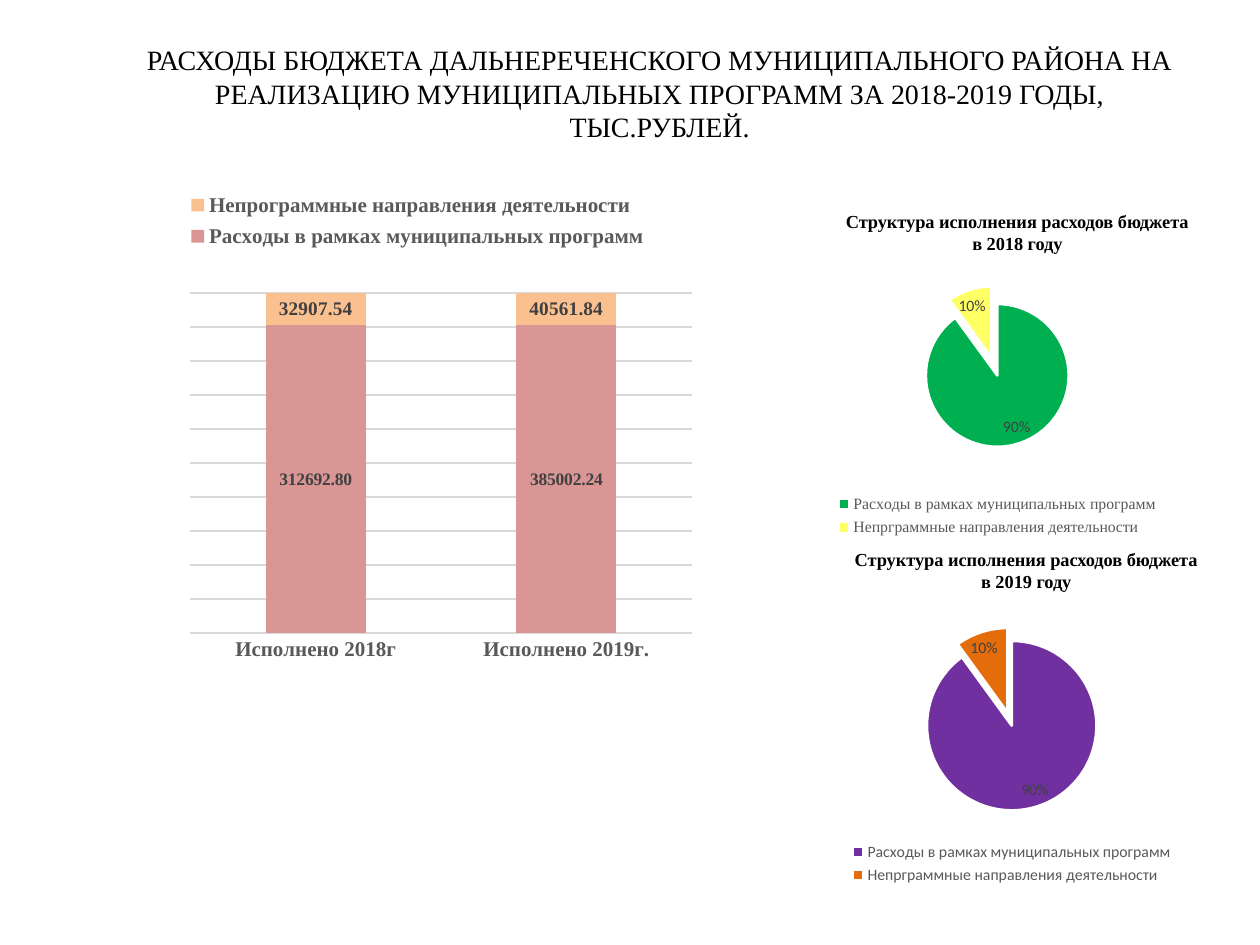
from lxml import etree
from pptx import Presentation
from pptx.chart.data import CategoryChartData
from pptx.dml.color import RGBColor
from pptx.enum.chart import (XL_CHART_TYPE, XL_LABEL_POSITION,
                             XL_LEGEND_POSITION, XL_TICK_MARK)
from pptx.enum.text import PP_ALIGN
from pptx.oxml.ns import qn
from pptx.util import Inches, Pt

STACKED_100, PIE = XL_CHART_TYPE.COLUMN_STACKED_100, XL_CHART_TYPE.PIE
BEST_FIT = XL_LABEL_POSITION.BEST_FIT
LEGEND_RIGHT, LEGEND_BOTTOM = XL_LEGEND_POSITION.RIGHT, XL_LEGEND_POSITION.BOTTOM
NO_TICK = XL_TICK_MARK.NONE
CENTER = PP_ALIGN.CENTER

BLACK = RGBColor(0x00, 0x00, 0x00)
GRAY = RGBColor(0x59, 0x59, 0x59)
DARK_GRAY = RGBColor(0x40, 0x40, 0x40)
LIGHT_GRAY = RGBColor(0xD9, 0xD9, 0xD9)
WHITE = RGBColor(0xFF, 0xFF, 0xFF)
ROSE = RGBColor(0xD9, 0x96, 0x94)
PEACH = RGBColor(0xFA, 0xC0, 0x90)
GREEN = RGBColor(0x00, 0xB0, 0x50)
YELLOW = RGBColor(0xFF, 0xFF, 0x66)
PURPLE = RGBColor(0x70, 0x30, 0xA0)
ORANGE = RGBColor(0xE4, 0x6C, 0x0A)

SERIF, SANS = "Times New Roman", "Calibri"


def set_font(font, size, color, name=SERIF, bold=False):
    font.name, font.size, font.bold = name, Pt(size), bold
    font.color.rgb = color


def add_text(s, box, text, size, color=BLACK, name=SERIF, bold=False):
    """Centred text box; each line of text becomes a paragraph."""
    tf = s.shapes.add_textbox(*map(Inches, box)).text_frame
    tf.word_wrap = True
    for i, line in enumerate(text.split("\n")):
        p = tf.paragraphs[0] if i == 0 else tf.add_paragraph()
        p.alignment = CENTER
        r = p.add_run()
        r.text = line
        set_font(r.font, size, color, name, bold)


def set_layout(parent, index, box, inner=False):
    """Fix a chart part at box, given as fractions of the chart."""
    for old in parent.findall(qn("c:layout")):
        parent.remove(old)
    layout = etree.Element(qn("c:layout"))
    manual = etree.SubElement(layout, qn("c:manualLayout"))
    values = [("layoutTarget", "inner")] if inner else []
    values += [("xMode", "edge"), ("yMode", "edge")]
    values += zip("xywh", box)
    for tag, value in values:
        etree.SubElement(manual, qn(f"c:{tag}")).set("val", str(value))
    parent.insert(index, layout)


def add_chart(s, box, kind, categories, series, plot_box):
    data = CategoryChartData()
    data.categories = categories
    for name, values in series:
        data.add_series(name, values)
    chart = s.shapes.add_chart(kind, *map(Inches, box), data).chart
    chart.has_title = False
    set_font(chart.font, 10, BLACK, "Arial")
    chart.has_legend = True
    set_layout(chart._chartSpace.chart.plotArea, 0, plot_box, inner=True)
    return chart


def add_expense_columns(s, box):
    chart = add_chart(
        s, box, STACKED_100, ["Исполнено 2018г", "Исполнено 2019г."],
        [("Расходы в рамках муниципальных программ", (312692.80, 385002.24)),
         ("Непрограммные направления деятельности", (32907.54, 40561.84))],
        (0.094, 0.233, 0.829, 0.671))
    plot = chart.plots[0]
    plot.gap_width, plot.overlap = 150, 100
    plot.vary_by_categories = False
    for ser, color, size in zip(plot.series, (ROSE, PEACH), (10, 11)):
        ser.format.fill.solid()
        ser.format.fill.fore_color.rgb = color
        labels = ser.data_labels
        labels.show_value = True
        labels.number_format, labels.number_format_is_linked = "0.00", False
        set_font(labels.font, size, DARK_GRAY, bold=True)

    axis = chart.category_axis
    axis.major_tick_mark = axis.minor_tick_mark = NO_TICK
    set_font(axis.tick_labels.font, 12, GRAY, bold=True)
    chart.value_axis.visible = False
    chart.value_axis.has_major_gridlines = True
    for line in (axis.format.line, chart.value_axis.major_gridlines.format.line):
        line.color.rgb, line.width = LIGHT_GRAY, Pt(0.75)

    legend = chart.legend
    legend.position, legend.include_in_layout = LEGEND_RIGHT, True
    set_font(legend.font, 12, GRAY, bold=True)
    set_layout(legend._element, 1, (0.07, 0.02, 0.8, 0.14))


def add_structure_pie(s, box, colors, explosion, diameter, center_y, legend_font):
    """Pie with its second slice pulled out; diameter in inches, explosion in percent."""
    width, height = box[2:]
    side = diameter * (1 + explosion / 100)
    w, h = side / width, side / height
    chart = add_chart(
        s, box, PIE,
        ["Расходы в рамках муниципальных программ",
         "Непрграммные направления деятельности"],
        [("Series 1", (90, 10))],
        (0.5 - w / 2, center_y / height - h / 2, w, h))
    chart.plots[0].vary_by_categories = True
    ser = chart.plots[0].series[0]
    for i, color in enumerate(colors):
        fmt = ser.points[i].format
        fmt.fill.solid()
        fmt.fill.fore_color.rgb = color
        fmt.line.color.rgb, fmt.line.width = WHITE, Pt(1.5)
    exploded = etree.Element(qn("c:explosion"))
    exploded.set("val", str(explosion))
    ser._element.findall(qn("c:dPt"))[1].find(qn("c:spPr")).addprevious(exploded)

    labels = ser.data_labels
    labels.show_percentage, labels.show_value = True, False
    labels.number_format, labels.number_format_is_linked = "0%", False
    labels.position = BEST_FIT
    set_font(labels.font, 9, DARK_GRAY, SANS)
    chart.legend.position, chart.legend.include_in_layout = LEGEND_BOTTOM, False
    set_font(chart.legend.font, 9, GRAY, legend_font)


def main():
    prs = Presentation()
    prs.slide_width, prs.slide_height = Inches(10), Inches(7.5)
    s = prs.slides.add_slide(prs.slide_layouts[6])

    add_text(s, (1.06, 0.29, 8.35, 0.9),
             "РАСХОДЫ БЮДЖЕТА ДАЛЬНЕРЕЧЕНСКОГО МУНИЦИПАЛЬНОГО РАЙОНА НА "
             "РЕАЛИЗАЦИЮ МУНИЦИПАЛЬНЫХ ПРОГРАММ ЗА 2018-2019 ГОДЫ, ТЫС.РУБЛЕЙ.", 16)
    add_expense_columns(s, (1.06, 1.39, 4.8, 4.02))

    add_text(s, (6.5, 1.62, 3.15, 0.45),
             "Структура исполнения расходов бюджета\nв 2018 году", 10.5, bold=True)
    add_structure_pie(s, (6.5, 2.08, 2.83, 2.22), (GREEN, YELLOW),
                      explosion=26, diameter=0.9, center_y=0.9, legend_font=SERIF)

    add_text(s, (6.65, 4.3, 2.99, 0.45),
             "Структура исполнения расходов бюджета в 2019 году", 10.5, bold=True)
    add_structure_pie(s, (6.65, 4.76, 2.76, 2.3), (PURPLE, ORANGE),
                      explosion=16, diameter=1.16, center_y=1, legend_font=SANS)

    prs.save("out.pptx")


if __name__ == "__main__":
    main()
